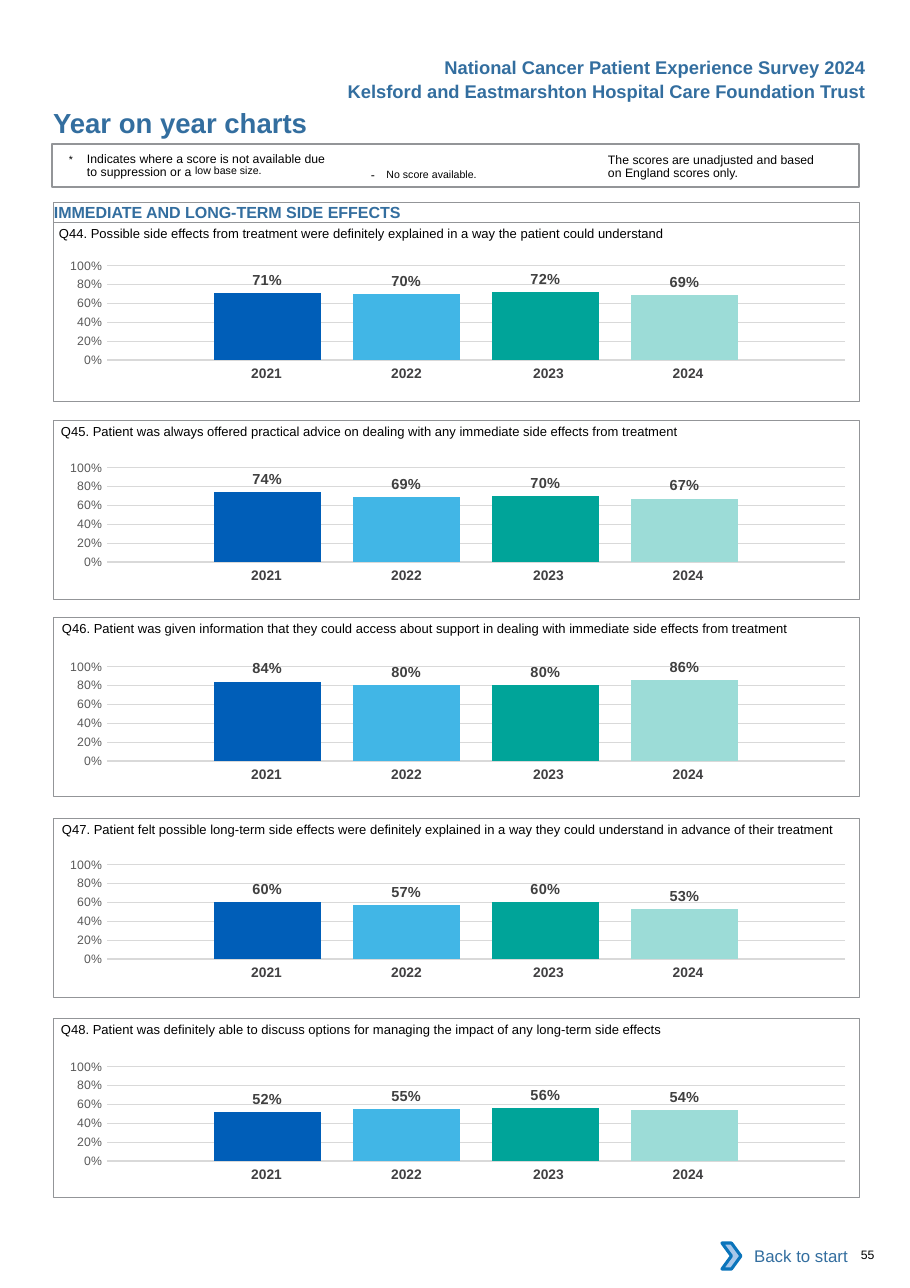
"""Build the year on year charts page of a patient survey report."""
from pptx import Presentation
from pptx.chart.data import CategoryChartData as Data
from pptx.dml.color import RGBColor as Rgb
from pptx.enum.chart import XL_CHART_TYPE as Kind, XL_LABEL_POSITION as Spot
from pptx.enum.chart import XL_TICK_MARK as Tick
from pptx.enum.shapes import MSO_SHAPE as Form
from pptx.enum.text import MSO_ANCHOR as Anchor, PP_ALIGN as Align
from pptx.oxml import parse_xml
from pptx.oxml.ns import nsdecls, qn
from pptx.util import Pt

PX = 8298
HUES = {"blue": "336E9F", "grey": "939598", "black": "000000", "year": "414042",
        "label": "404040", "tick": "595959", "grid": "D9D9D9", "white": "FFFFFF",
        "arrow": "A8C7E9", "edge": "0A74BB"}
BARS = ["005EB8", "41B6E6", "00A499", "9CDCD7"]
YEARS = ["2021", "2022", "2023", "2024"]
COLS = [140, 140, 148, 140]
PADS = [0, 0, 4, 13]
PLOT = {"x": 0.079, "y": 0.145, "w": 0.915, "h": 0.666}
NO_STYLE = "{2D5ABB26-0587-4C30-8999-92F81FD0307C}"

HEADS = [
    ("National Cancer Patient Experience Survey 2024", 51),
    ("Kelsford and Eastmarshton Hospital Care Foundation Trust", 75),
]
TITLE = "Year on year charts"
TOPIC = "IMMEDIATE AND LONG-TERM SIDE EFFECTS"
NOTES = [
    ((69, 152, 262, 30), (0, 3, 0, 0), 8.1, 18,
     [("*\t", 12, 3, 0), ("Indicates where a score is not available due to suppression or a ", 8, 0, 0),
      ("low base size.", 12, 7, 0)]),
    ((360, 155, 202, 26), (11, 6, 11, 6), None, 0,
     [("- ", 8, 0, 2.6), ("No score available.", 12, 3, 0)]),
    ((608, 152, 214, 30), (0, 3, 0, 0), 8.1, 0,
     [("The scores are unadjusted and based on England scores only.", 8, 0, 0)]),
]
PANELS = [
    ("Q44. Possible side effects from treatment were definitely explained in a way the patient could understand",
     59, 222, 245, [0.71, 0.7, 0.72, 0.69]),
    ("Q45. Patient was always offered practical advice on dealing with any immediate side effects from treatment",
     61, 420, 447, [0.74, 0.69, 0.7, 0.67]),
    ("Q46. Patient was given information that they could access about support in dealing with "
     "immediate side effects from treatment",
     62, 617, 646, [0.84, 0.8, 0.8, 0.86]),
    ("Q47. Patient felt possible long-term side effects were definitely explained in a way they "
     "could understand in advance of their treatment",
     62, 818, 844, [0.6, 0.57, 0.6, 0.53]),
    ("Q48. Patient was definitely able to discuss options for managing the impact of any long-term side effects",
     61, 1018, 1046, [0.52, 0.55, 0.56, 0.54]),
]


def put(item, **vals):
    for key, val in vals.items():
        setattr(item, key, val)


def emu(box):
    return [n * PX for n in box]


def ink(font, size, hue, bold=False):
    put(font, name="Arial", size=Pt(size), bold=bold)
    font.color.rgb = Rgb.from_string(HUES[hue])


def pad(item, left, top, right, low):
    put(item, margin_left=left * PX, margin_top=top * PX,
        margin_right=right * PX, margin_bottom=low * PX)


def write(box, words, size, hue="black", bold=False, align=Align.LEFT):
    frame = page.shapes.add_textbox(*emu(box)).text_frame
    put(frame, word_wrap=True, vertical_anchor=Anchor.MIDDLE)
    pad(frame, 0, 0, 0, 0)
    line = frame.paragraphs[0]
    line.alignment = align
    run = line.add_run()
    run.text = words
    ink(run.font, size, hue, bold)


def note(box, pads, lead, hang, runs):
    frame = page.shapes.add_textbox(*emu(box)).text_frame
    frame.word_wrap = True
    pad(frame, *pads)
    line = frame.paragraphs[0]
    if lead:
        line.line_spacing = Pt(lead)
    if hang:
        props = line._p.get_or_add_pPr()
        props.set("marL", str(hang * PX))
        props.set("indent", str(-hang * PX))
    for words, size, lift, gap in runs:
        run = line.add_run()
        run.text = words
        ink(run.font, size, "black")
        props = run._r.get_or_add_rPr()
        if lift:
            props.set("baseline", str(lift * 1000))
        if gap:
            props.set("spc", str(int(gap * 100)))


def draw(form, box, line, width, fill=None):
    shape = page.shapes.add_shape(form, *emu(box))
    shape.shadow.inherit = False
    if fill:
        shape.fill.solid()
        shape.fill.fore_color.rgb = Rgb.from_string(HUES[fill])
    else:
        shape.fill.background()
    shape.line.color.rgb = Rgb.from_string(HUES[line])
    shape.line.width = Pt(width)


def plot(top, vals):
    data = Data(number_format="0%")
    data.categories = ["1"]
    for year, val in zip(YEARS, vals):
        data.add_series(year, [val])
    chart = page.shapes.add_chart(Kind.COLUMN_CLUSTERED, *emu((43, top, 807, 142)), data).chart
    put(chart, has_title=False, has_legend=False)
    put(chart.font, name="Calibri", size=Pt(10))
    put(chart.plots[0], gap_width=200, overlap=-30, vary_by_categories=False)
    chart.category_axis.visible = False
    axis = chart.value_axis
    put(axis, minimum_scale=0, maximum_scale=1, major_unit=0.2, has_major_gridlines=True,
        major_tick_mark=Tick.NONE, minor_tick_mark=Tick.NONE)
    put(axis.tick_labels, number_format="0%", number_format_is_linked=False)
    ink(axis.tick_labels.font, 8, "tick")
    axis.format.line.fill.background()
    grid = axis.major_gridlines.format.line
    grid.color.rgb = Rgb.from_string(HUES["grid"])
    grid.width = Pt(0.75)
    for bar, hue in zip(chart.series, BARS):
        bar.format.fill.solid()
        bar.format.fill.fore_color.rgb = Rgb.from_string(hue)
        put(bar.data_labels, show_value=True, position=Spot.OUTSIDE_END,
            number_format="0%", number_format_is_linked=False)
        ink(bar.data_labels.font, 9.5, "label", True)
    area = chart._chartSpace.chart.plotArea
    for old in area.findall(qn("c:layout")):
        area.remove(old)
    modes = '<c:layoutTarget val="inner"/><c:xMode val="edge"/><c:yMode val="edge"/>'
    sizes = "".join(f'<c:{key} val="{val}"/>' for key, val in PLOT.items())
    area.insert(0, parse_xml(f'<c:layout {nsdecls("c")}><c:manualLayout>'
                             f'{modes}{sizes}</c:manualLayout></c:layout>'))


def years(top):
    table = page.shapes.add_table(1, len(YEARS), *emu((191, top, sum(COLS), 30))).table
    put(table, first_row=False, horz_banding=False)
    table._tbl.tblPr.find(qn("a:tableStyleId")).text = NO_STYLE
    for num, (year, wide, right) in enumerate(zip(YEARS, COLS, PADS)):
        table.columns[num].width = wide * PX
        cell = table.cell(0, num)
        cell.fill.background()
        pad(cell, 11, 5, right, 5)
        cell.text = year
        line = cell.text_frame.paragraphs[0]
        line.alignment = Align.CENTER
        ink(line.runs[0].font, 9, "year", True)


deck = Presentation()
put(deck, slide_width=910 * PX, slide_height=1288 * PX)
page = deck.slides.add_slide(deck.slide_layouts[6])

for words, top in HEADS:
    write((330, top, 536, 33), words, 12, "blue", True, Align.RIGHT)
write((53, 106, 496, 34), TITLE, 18, "blue", True)
draw(Form.RECTANGLE, (52, 144, 807, 43), "grey", 0.75)
for item in NOTES:
    note(*item)
draw(Form.RECTANGLE, (53, 202, 806, 20), "grey", 0.5)
write((54, 202, 800, 20), TOPIC, 10.5, "blue", True)

for words, left, top, high, vals in PANELS:
    draw(Form.RECTANGLE, (53, top, 806, 179), "grey", 0.5)
    write((left, top, 796, 22), words, 8.5)
    plot(high, vals)
    years(high + 116)

draw(Form.CHEVRON, (722, 1243, 19, 26), "edge", 2, "arrow")
write((740, 1233, 108, 46), "Back to start", 11, "blue", align=Align.RIGHT)
write((861, 1248, 34, 14), "55", 8)
deck.save("out.pptx")
